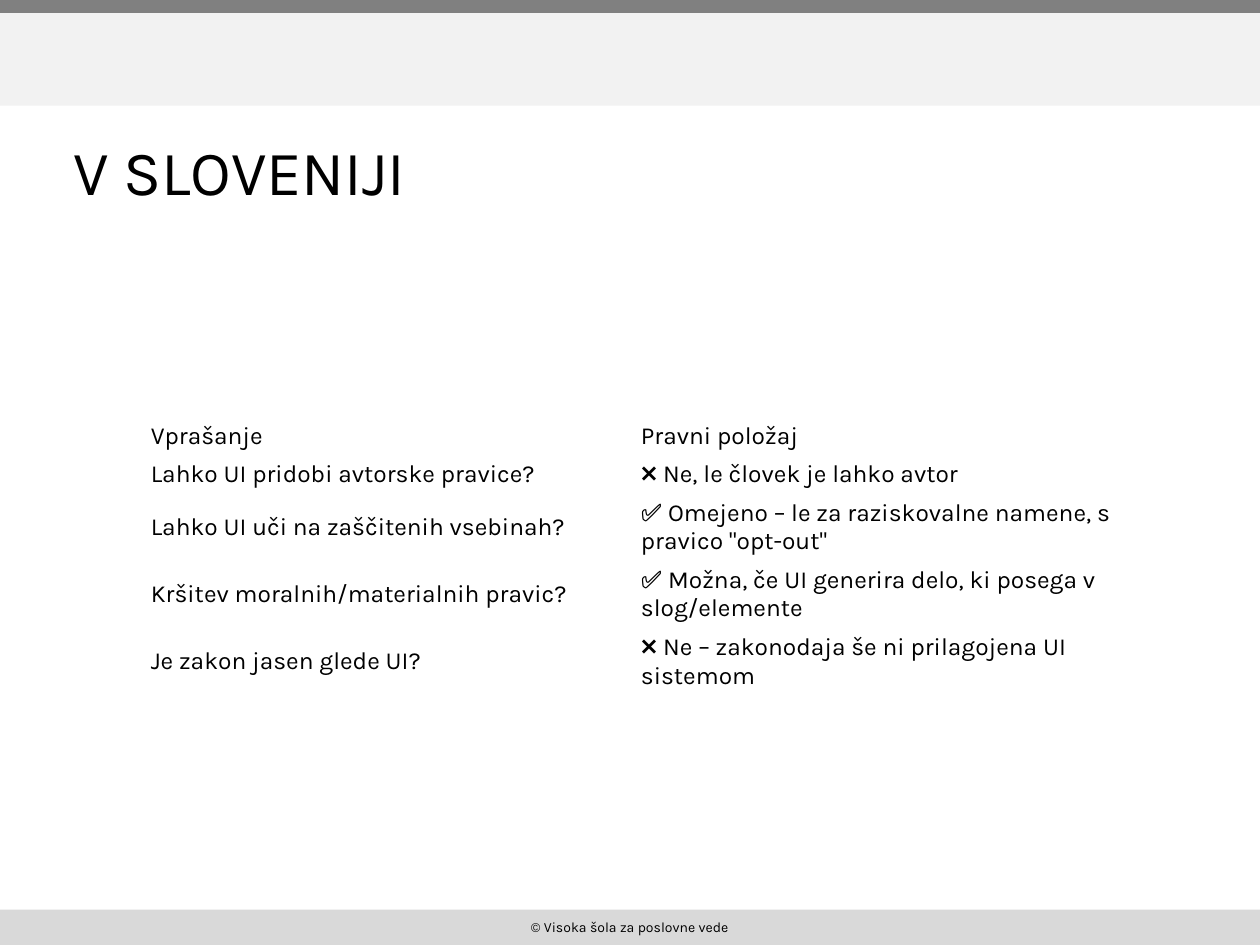
from pptx import Presentation
from pptx import util as u
from pptx.dml.color import RGBColor
from pptx.enum import shapes, text

COLORS = {"ink": "000000", "foot": "D9D9D9", "band": "F2F2F2", "edge": "808080"}
WIDTH, HEIGHT = 25.4, 19.05
ROWS = [
    ("Vprašanje", "Pravni položaj"),
    ("Lahko UI pridobi avtorske pravice?", "❌ Ne, le človek je lahko avtor"),
    ("Lahko UI uči na zaščitenih vsebinah?",
     "✅ Omejeno – le za raziskovalne namene, s pravico \"opt-out\""),
    ("Kršitev moralnih/materialnih pravic?",
     "✅ Možna, če UI generira delo, ki posega v slog/elemente"),
    ("Je zakon jasen glede UI?", "❌ Ne – zakonodaja še ni prilagojena UI sistemom"),
]
HEIGHTS = [0.77, 0.77, 1.34, 1.34, 1.34]


def color(name):
    return RGBColor.from_string(COLORS[name])


def write(frame, words, size=14, font="Karla", ink="ink", align=text.PP_ALIGN.LEFT):
    frame.word_wrap = True
    para = frame.paragraphs[0]
    para.alignment = align
    run = para.add_run()
    run.text = words
    run.font.size = u.Pt(size)
    run.font.name = font
    run.font.bold = False
    run.font.color.rgb = color(ink)


class Page:
    def __init__(self, slide):
        self.slide = slide

    def bar(self, top, height, fill):
        """Draw a strip across the full slide width."""
        bar = self.slide.shapes.add_shape(
            shapes.MSO_SHAPE.RECTANGLE, 0, u.Cm(top), u.Cm(WIDTH), u.Cm(height))
        bar.shadow.inherit = False
        bar.fill.solid()
        bar.fill.fore_color.rgb = color(fill)
        bar.line.fill.background()
        return bar

    def title(self, words, left, top, width, height):
        title = self.slide.shapes.title
        title.left, title.top = u.Cm(left), u.Cm(top)
        title.width, title.height = u.Cm(width), u.Cm(height)
        title.text_frame.vertical_anchor = text.MSO_ANCHOR.MIDDLE
        write(title.text_frame, words, size=36)

    def table(self, rows, heights, left, top, width):
        table = self.slide.shapes.add_table(
            len(rows), len(rows[0]), u.Cm(left), u.Cm(top),
            u.Cm(width), u.Cm(sum(heights))).table
        table.first_row = table.horz_banding = False
        for row, height, words in zip(table.rows, heights, rows):
            row.height = u.Cm(height)
            for cell, word in zip(row.cells, words):
                cell.fill.background()
                cell.vertical_anchor = text.MSO_ANCHOR.MIDDLE
                cell.margin_left = cell.margin_right = u.Cm(0.19)
                cell.margin_top = cell.margin_bottom = u.Cm(0.1)
                write(cell.text_frame, word)


def main():
    deck = Presentation()
    deck.slide_width, deck.slide_height = u.Cm(WIDTH), u.Cm(HEIGHT)
    page = Page(deck.slides.add_slide(deck.slide_layouts[5]))
    foot = page.bar(HEIGHT - 0.71, 0.71, "foot")
    foot.text_frame.vertical_anchor = text.MSO_ANCHOR.MIDDLE
    write(foot.text_frame, "© Visoka šola za poslovne vede", size=8,
          align=text.PP_ALIGN.CENTER)
    page.bar(0, 2.13, "band")
    page.bar(0, 0.26, "edge")
    page.title("V SLOVENIJI", 1.22, 2.13, 22.86, 2.62)
    page.table(ROWS, HEIGHTS, 2.85, 8.4, 19.76)
    deck.save("out.pptx")


if __name__ == "__main__":
    main()
